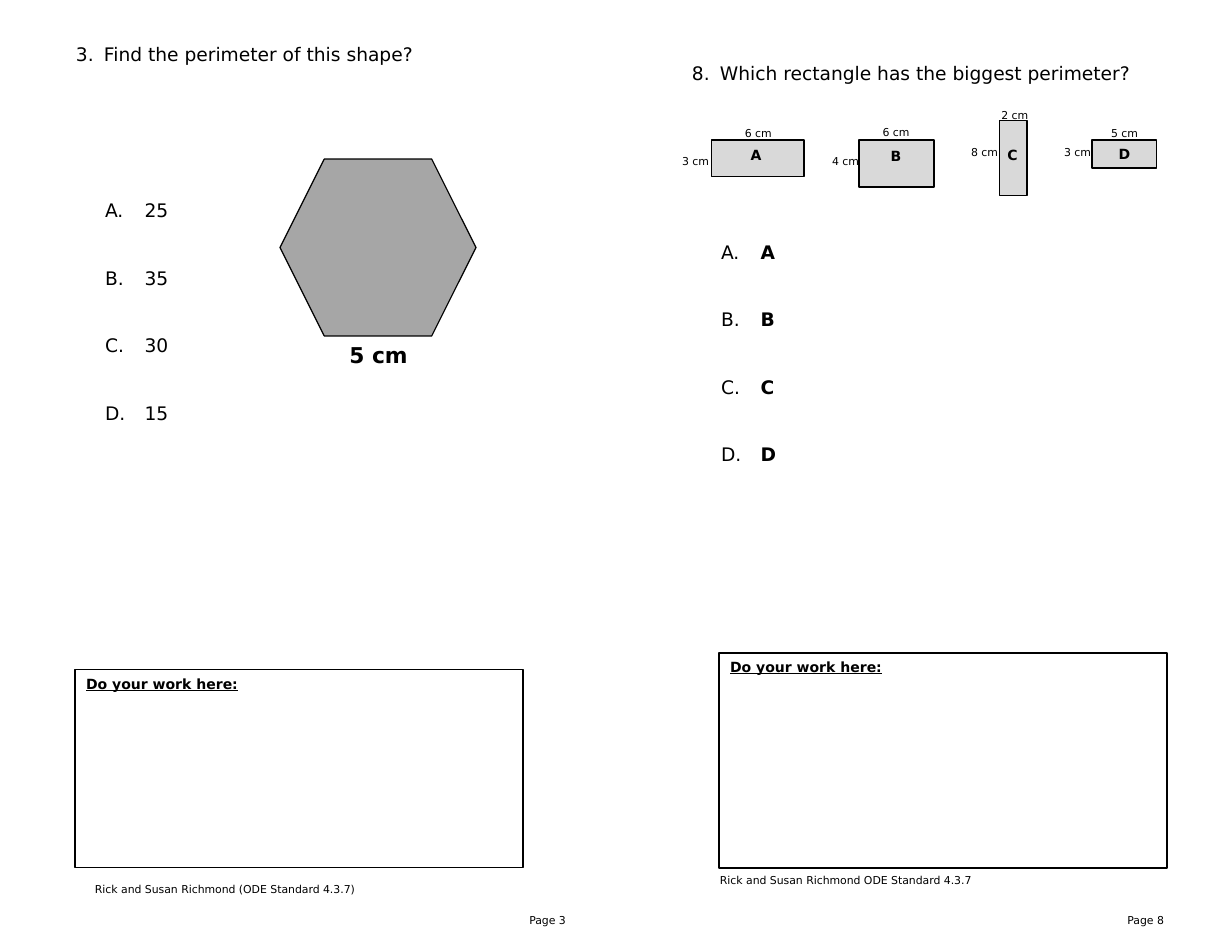
from lxml.etree import SubElement
from pptx import Presentation
from pptx.dml.color import RGBColor
from pptx.enum.shapes import MSO_SHAPE
from pptx.enum.text import MSO_ANCHOR, MSO_AUTO_SIZE, PP_ALIGN
from pptx.oxml.ns import qn
from pptx.util import Inches, Pt

BLACK = RGBColor(0x00, 0x00, 0x00)
GRAY = RGBColor(0xA6, 0xA6, 0xA6)
LIGHT_GRAY = RGBColor(0xD9, 0xD9, 0xD9)


def write(paragraph, text, *, size=12, bold=False, underline=False,
          align=PP_ALIGN.LEFT, font="DejaVu Sans", color=BLACK):
    paragraph.alignment = align
    run = paragraph.add_run()
    run.text = text
    run.font.name = font
    run.font.size = Pt(size)
    run.font.bold = bold
    run.font.underline = underline
    run.font.color.rgb = color


def number(paragraph, scheme, margin, hanging, start=1):
    properties = paragraph._p.get_or_add_pPr()
    properties.set("marL", str(Inches(margin)))
    properties.set("indent", str(-Inches(hanging)))
    numbering = SubElement(properties, qn("a:buAutoNum"), type=scheme)
    if start > 1:
        numbering.set("startAt", str(start))


class Worksheet:
    outline = Pt(0.75)
    answer_gap = Pt(29)

    def __init__(self, slide):
        self.slide = slide

    def frame(self, left, top, width, height):
        box = self.slide.shapes.add_textbox(
            Inches(left), Inches(top), Inches(width), Inches(height))
        box.text_frame.word_wrap = True
        box.text_frame.auto_size = MSO_AUTO_SIZE.SHAPE_TO_FIT_TEXT
        return box.text_frame

    def label(self, text, left, top, width, height=0.22, **style):
        write(self.frame(left, top, width, height).paragraphs[0], text, **style)

    def figure(self, preset, left, top, width, height, fill=None, rotation=0):
        figure = self.slide.shapes.add_shape(
            preset, Inches(left), Inches(top), Inches(width), Inches(height))
        figure.shadow.inherit = False
        figure.rotation = rotation
        figure.line.color.rgb = BLACK
        figure.line.width = self.outline
        if fill is None:
            figure.fill.background()
        else:
            figure.fill.solid()
            figure.fill.fore_color.rgb = fill
        return figure

    def work_area(self, left, top, height):
        area = self.figure(MSO_SHAPE.RECTANGLE, left, top, 4, height)
        area.text_frame.vertical_anchor = MSO_ANCHOR.TOP
        area.text_frame.word_wrap = True
        write(area.text_frame.paragraphs[0], "Do your work here:",
              size=9, bold=True, underline=True)

    def question(self, start, text, left, top, width):
        prompt = self.frame(left, top, width, 0.3).paragraphs[0]
        write(prompt, text)
        number(prompt, "arabicPeriod", 0.25, 0.25, start)

    def answers(self, choices, left, top, bold=False):
        frame = self.frame(left, top, 1.5, 2.1)
        for index, choice in enumerate(choices):
            answer = frame.add_paragraph() if index else frame.paragraphs[0]
            write(answer, " ")
            write(answer, choice, bold=bold)
            number(answer, "alphaUcPeriod", 0.56, 0.3)
            if index < len(choices) - 1:
                answer.space_after = self.answer_gap

    def measured_rectangle(self, name, box, rotation, name_at, across, down):
        self.figure(MSO_SHAPE.RECTANGLE, *box, fill=LIGHT_GRAY, rotation=rotation)
        for length, left, top in (across, down):
            self.label(f"{length} cm", left, top, 0.5, size=7, align=PP_ALIGN.CENTER)
        self.label(name, *name_at, 0.5, 0.25, size=9, bold=True,
                   align=PP_ALIGN.CENTER)


def main():
    presentation = Presentation()
    presentation.slide_width = Inches(11)
    presentation.slide_height = Inches(8.5)
    sheet = Worksheet(presentation.slides.add_slide(presentation.slide_layouts[6]))

    sheet.question(3, "Find the perimeter of this shape?", 0.58, 0.33, 4.25)
    sheet.answers(("25", "35", "30", "15"), 0.58, 1.73)
    sheet.figure(MSO_SHAPE.HEXAGON, 2.5, 1.42, 1.75, 1.58, fill=GRAY)
    sheet.label("5 cm", 2.92, 3, 0.92, 0.34, size=14, bold=True,
                align=PP_ALIGN.CENTER)
    sheet.work_area(0.67, 5.98, 1.77)
    sheet.label("Rick and Susan Richmond (ODE Standard 4.3.7)",
                0.75, 7.83, 2.67, size=7)
    sheet.label("Page 3", 4.33, 8.11, 0.82, size=7, align=PP_ALIGN.RIGHT)

    sheet.question(8, "Which rectangle has the biggest perimeter?", 6.08, 0.5, 4.42)
    rectangles = (
        ("A", (6.35, 1.25, 0.83, 0.33), 0, (6.5, 1.26), (6, 6.52, 1.08), (3, 5.96, 1.33)),
        ("B", (7.67, 1.25, 0.67, 0.42), 0, (7.75, 1.27), (6, 7.75, 1.07), (4, 7.3, 1.33)),
        ("C", (8.71, 1.29, 0.67, 0.25), 90, (8.79, 1.26), (2, 8.81, 0.92), (8, 8.54, 1.25)),
        ("D", (9.75, 1.25, 0.58, 0.25), 0, (9.79, 1.25), (5, 9.79, 1.08), (3, 9.37, 1.25)),
    )
    for rectangle in rectangles:
        sheet.measured_rectangle(*rectangle)
    sheet.answers([rectangle[0] for rectangle in rectangles], 6.08, 2.1, bold=True)
    sheet.work_area(6.42, 5.83, 1.92)
    sheet.label("Rick and Susan Richmond ODE Standard 4.3.7",
                6.33, 7.75, 4.08, size=7)
    sheet.label("Page 8", 9.67, 8.11, 0.82, size=7, align=PP_ALIGN.RIGHT)

    presentation.save("out.pptx")


if __name__ == "__main__":
    main()
